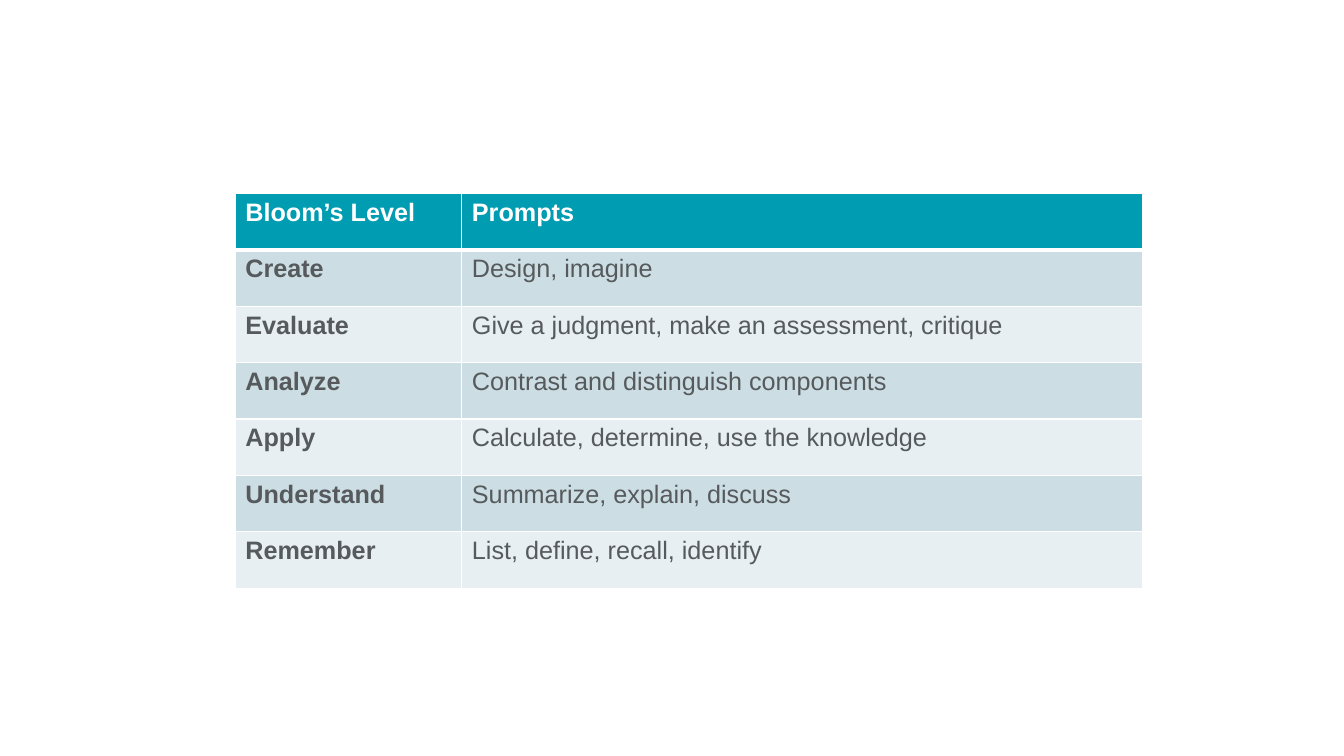
from dataclasses import dataclass

from lxml import etree
from pptx import Presentation
from pptx.dml.color import RGBColor
from pptx.oxml import ns
from pptx.util import Cm, Pt


@dataclass(frozen=True)
class Theme:
    font: str = "Arial"
    size: int = 18
    head: str = "009CB1"
    bands: tuple = ("CCDEE4", "E7EFF2")
    ink: str = "565A5C"
    white: str = "FFFFFF"
    thin: int = 1
    thick: int = 3


THEME = Theme()

LEVELS = [
    ("Bloom’s Level", "Prompts"),
    ("Create", "Design, imagine"),
    ("Evaluate", "Give a judgment, make an assessment, critique"),
    ("Analyze", "Contrast and distinguish components"),
    ("Apply", "Calculate, determine, use the knowledge"),
    ("Understand", "Summarize, explain, discuss"),
    ("Remember", "List, define, recall, identify"),
]


def set_edges(cell, widths):
    """Draw white cell borders; widths maps each side (L, R, T, B) to points."""
    props = cell._tc.get_or_add_tcPr()
    for side, width in widths.items():
        line = etree.SubElement(props, ns.qn(f"a:ln{side}"), w=str(Pt(width)))
        fill = etree.SubElement(line, ns.qn("a:solidFill"))
        etree.SubElement(fill, ns.qn("a:srgbClr"), val=THEME.white)


def fill_cell(cell, label, fill, ink, bold):
    cell.fill.solid()
    cell.fill.fore_color.rgb = RGBColor.from_string(fill)
    cell.text = label
    font = cell.text_frame.paragraphs[0].font
    font.name = THEME.font
    font.size = Pt(THEME.size)
    font.bold = bold
    font.color.rgb = RGBColor.from_string(ink)


def add_levels(slide, left, top, widths, height):
    """Add the table of levels, with a header row and banded rows below it."""
    frame = slide.shapes.add_table(
        len(LEVELS), len(widths), left, top, sum(widths), height * len(LEVELS)
    )
    table = frame.table
    for col, width in zip(table.columns, widths):
        col.width = width
    for i, labels in enumerate(LEVELS):
        table.rows[i].height = height
        head = i == 0
        fill = THEME.head if head else THEME.bands[(i - 1) % 2]
        ink = THEME.white if head else THEME.ink
        above = THEME.thick if i == 1 else THEME.thin
        below = THEME.thick if head else THEME.thin
        edges = {"L": THEME.thin, "R": THEME.thin, "T": above, "B": below}
        for j, label in enumerate(labels):
            cell = table.cell(i, j)
            set_edges(cell, edges)
            fill_cell(cell, label, fill, ink, head or j == 0)


def main():
    deck = Presentation()
    deck.slide_width = Cm(33.87)
    deck.slide_height = Cm(19.05)
    slide = deck.slides.add_slide(deck.slide_layouts[6])
    add_levels(slide, Cm(5.93), Cm(4.88), (Cm(5.71), Cm(17.15)), Cm(1.42))
    deck.save("out.pptx")


if __name__ == "__main__":
    main()
